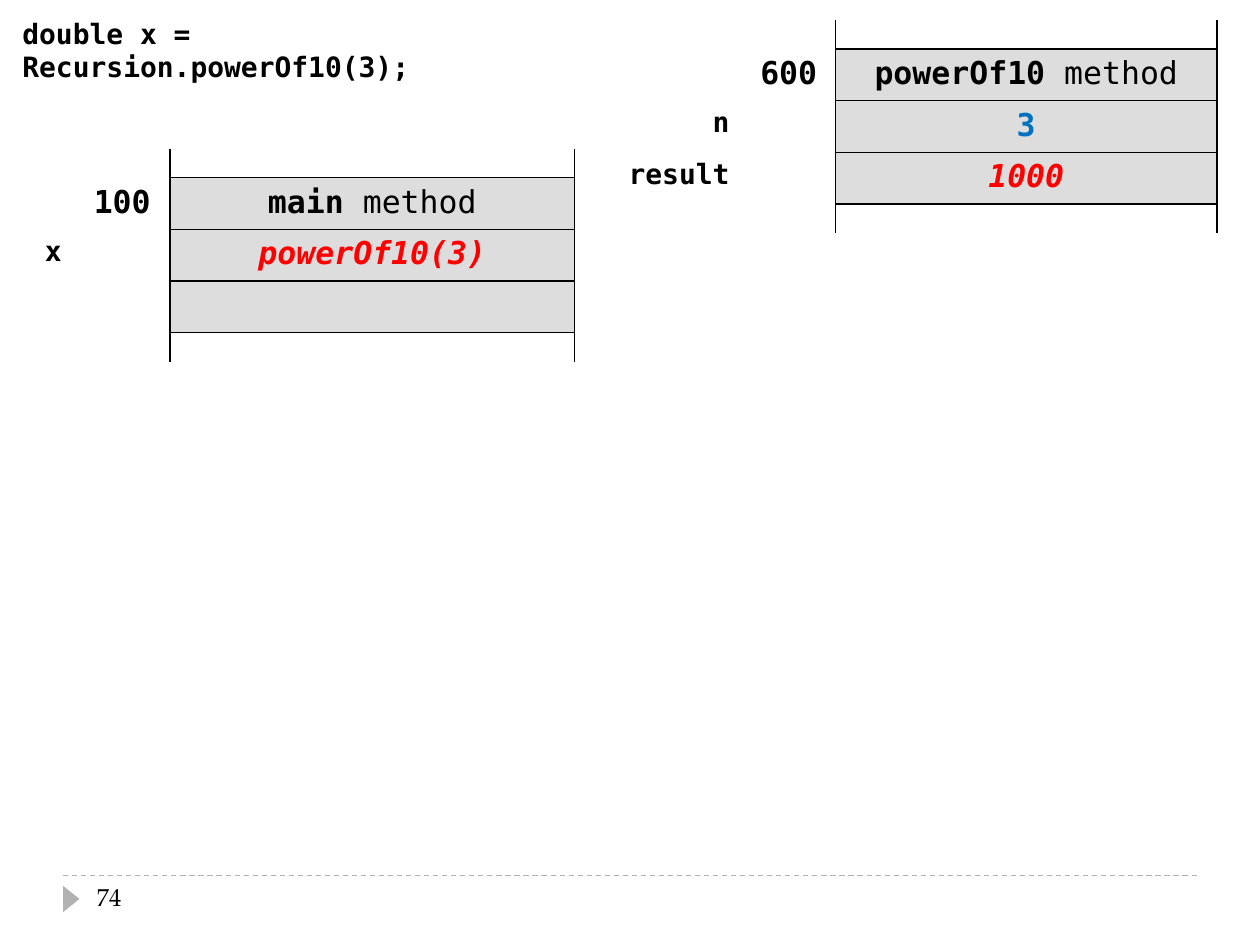
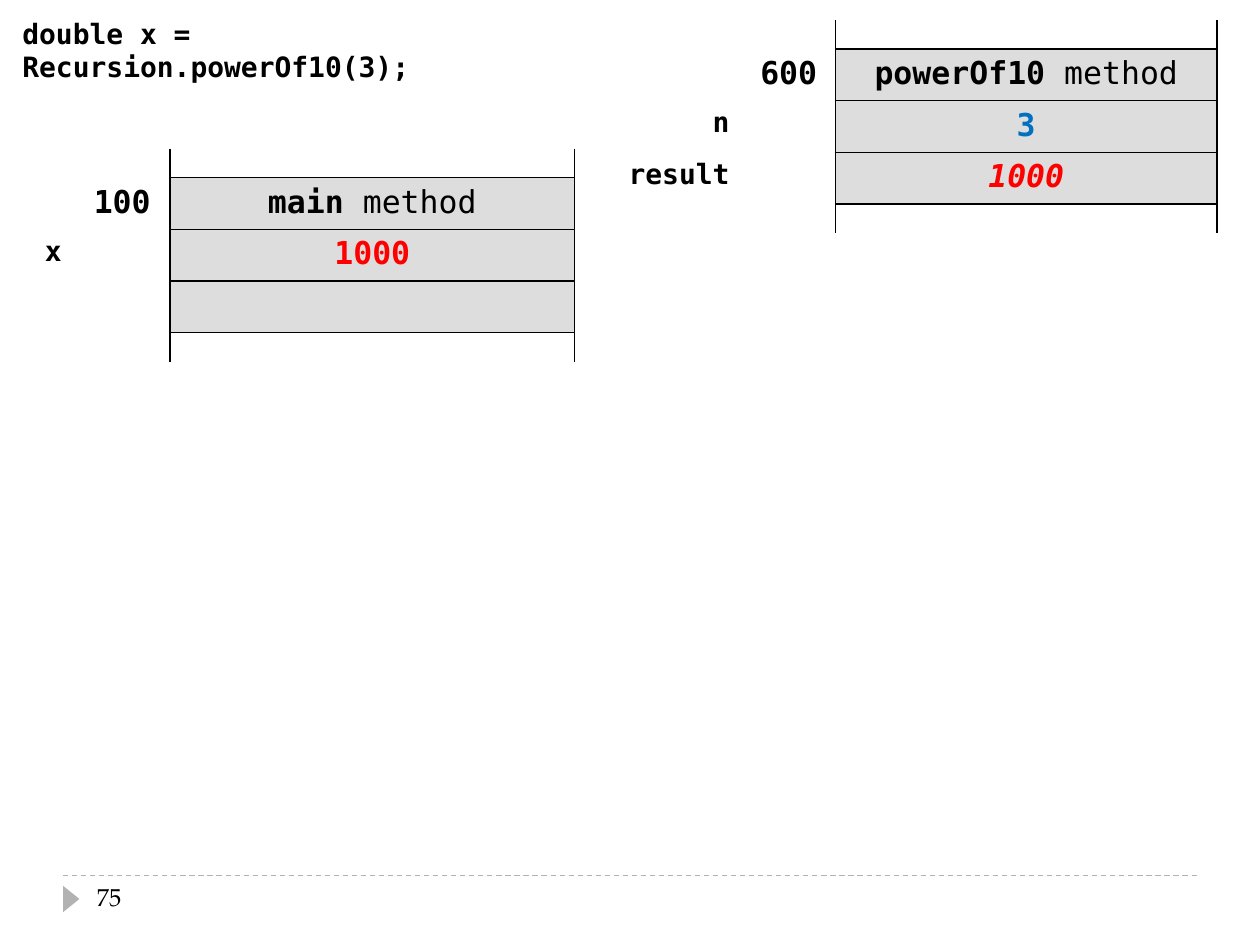
from dataclasses import dataclass

from lxml.etree import SubElement
from pptx import Presentation
from pptx.dml.color import RGBColor as Color
from pptx.enum.dml import MSO_LINE_DASH_STYLE as Dash
from pptx.enum.shapes import MSO_CONNECTOR as Connector, MSO_SHAPE as Shape
from pptx.enum.text import PP_ALIGN as Align
from pptx.oxml.ns import qn
from pptx.util import Inches, Pt


@dataclass(frozen=True)
class Theme:
    ink: str = "000000"
    blue: str = "0070C0"
    red: str = "FF0000"
    cell: str = "DDDDDD"
    band: str = "B2B2B2"
    code_font: str = "DejaVu Sans Mono"
    number_font: str = "TeX Gyre Pagella"
    value_size: int = 18
    label_size: int = 16
    number_size: int = 14
    spacer_size: int = 6
    border: int = 1
    plain_table: str = "{2D5ABB26-0587-4C30-8999-92F81FD0307C}"


THEME = Theme()
EDGES = {"l": "a:lnL", "r": "a:lnR", "t": "a:lnT", "b": "a:lnB"}
CAP_HEIGHT, ROW_HEIGHT = 0.23, 0.41
CODE = "double x = Recursion.powerOf10(3);"


def add_span(para, text, size=THEME.value_size, color=THEME.ink,
             font=THEME.code_font, bold=True, italic=False):
    span = para.add_run()
    span.text = text
    formats = {"size": Pt(size), "name": font, "bold": bold, "italic": italic}
    for name, value in formats.items():
        setattr(span.font, name, value)
    span.font.color.rgb = Color.from_string(color)


def add_text(page, place, text, **formats):
    box = page.shapes.add_textbox(*map(Inches, place))
    box.text_frame.word_wrap = True
    add_span(box.text_frame.paragraphs[0], text, **formats)


def border_cell(cell, edges):
    properties = cell._tc.get_or_add_tcPr()
    for edge, tag in EDGES.items():
        if edge in edges:
            line = SubElement(properties, qn(tag), w=str(Pt(THEME.border)))
            fill = SubElement(line, qn("a:solidFill"))
            SubElement(fill, qn("a:srgbClr"), val=THEME.ink)


def shrink_empty(cell):
    para = cell.text_frame.paragraphs[0]
    SubElement(para._p, qn("a:endParaRPr"), sz=str(THEME.spacer_size * 100))
    cell.margin_top = cell.margin_bottom = 0


def fill_cell(cell, spans, align=Align.CENTER):
    if not spans:
        shrink_empty(cell)
        return
    para = cell.text_frame.paragraphs[0]
    para.alignment = align
    for text, formats in spans:
        add_span(para, text, **formats)


def add_stack_frame(page, left, top, widths, address, method, variables):
    title = [(method + " ", {}), ("method", {"bold": False})]
    rows = [("", address, title)] + [(name, "", value) for name, value in variables]
    heights = [CAP_HEIGHT] + [ROW_HEIGHT] * len(rows) + [CAP_HEIGHT]
    frame = page.shapes.add_table(
        len(heights), len(widths), *map(Inches, (left, top, sum(widths), sum(heights))))
    table = frame.table
    table.first_row = table.horz_banding = False
    table._tbl.tblPr.find(qn("a:tableStyleId")).text = THEME.plain_table
    for column, width in zip(table.columns, widths):
        column.width = Inches(width)
    for row, height in zip(table.rows, heights):
        row.height = Inches(height)

    blank = ("", "", [])
    last = len(heights) - 1
    for index, (label, number, value) in enumerate([blank, *rows, blank]):
        name_cell, address_cell, value_cell = table.rows[index].cells
        label_spans = [(label, {"size": THEME.label_size})] if label else []
        fill_cell(name_cell, label_spans, Align.RIGHT)
        fill_cell(address_cell, [(number, {})] if number else [])
        fill_cell(value_cell, value)
        border_cell(address_cell, "r")
        border_cell(value_cell, {0: "lrb", last: "lrt"}.get(index, "lrtb"))
        if 0 < index < last:
            value_cell.fill.solid()
            value_cell.fill.fore_color.rgb = Color.from_string(THEME.cell)


def add_footer_band(page, layout):
    band = Color.from_string(THEME.band)
    rule = page.shapes.add_connector(
        Connector.STRAIGHT, *map(Inches, (0.5, 6.95, 9.5, 6.95)))
    rule.line.color.rgb = band
    rule.line.width = Pt(0.75)
    rule.line.dash_style = Dash.DASH
    SubElement(rule._element.spPr, qn("a:effectLst"))
    marker = page.shapes.add_shape(
        Shape.ISOSCELES_TRIANGLE, *map(Inches, (0.46, 7.07, 0.21, 0.13)))
    marker.rotation = 90
    marker.shadow.inherit = False
    marker.fill.solid()
    marker.fill.fore_color.rgb = band
    marker.line.fill.background()
    for shape in (rule, marker):
        layout.shapes._spTree.append(shape._element)


def add_call_page(page, number, x_value):
    add_text(page, (0.67, 6.95, 2.17, 0.4), str(number), size=THEME.number_size,
             font=THEME.number_font, bold=False)
    result = [("1000", {"color": THEME.red, "italic": True})]
    add_stack_frame(page, 4.72, 0.16, (1.17, 0.74, 3.03), "600", "powerOf10",
                    [("n", [("3", {"color": THEME.blue})]), ("result", result)])
    add_stack_frame(page, 0.06, 1.18, (0.53, 0.76, 3.21), "100", "main",
                    [("x", [x_value]), ("", [])])
    add_text(page, (0.08, 0.08, 4.37, 0.37), CODE, size=THEME.label_size)


def main():
    deck = Presentation()
    deck.slide_width, deck.slide_height = Inches(10), Inches(7.5)
    layout = deck.slide_layouts[6]
    x_values = [("powerOf10(3)", {"color": THEME.red, "italic": True}),
                ("1000", {"color": THEME.red})]
    pages = [deck.slides.add_slide(layout) for value in x_values]
    add_footer_band(pages[0], layout)
    for number, (page, value) in enumerate(zip(pages, x_values), start=74):
        add_call_page(page, number, value)
    deck.save("out.pptx")


if __name__ == "__main__":
    main()
